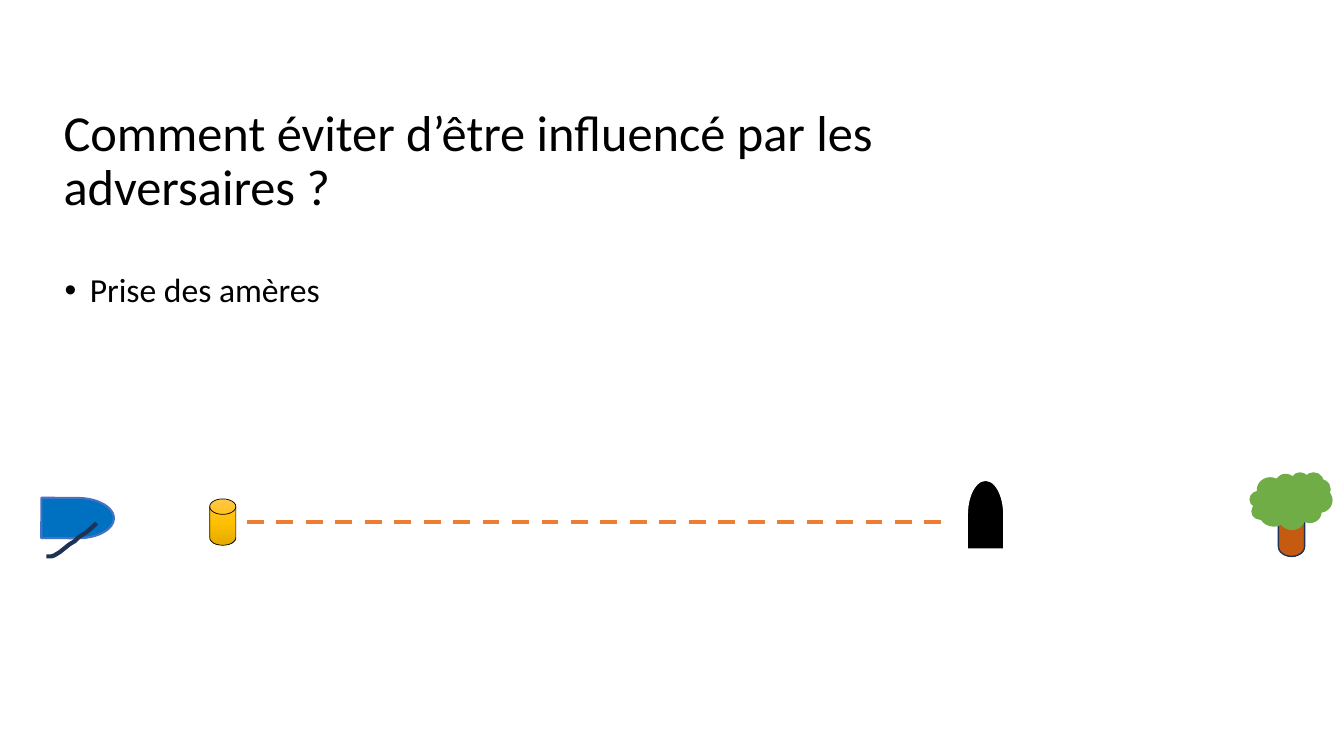
from copy import deepcopy

from lxml import etree
from pptx import Presentation
from pptx import util as u
from pptx.dml.color import RGBColor
from pptx.enum import dml, shapes, text
from pptx.oxml.ns import qn

TITLE = "Comment éviter d’être influencé par les adversaires ?"
BULLET = "Prise des amères"
FONT = "Calibri"
DISK = shapes.MSO_SHAPE.FLOWCHART_MAGNETIC_DISK
DELAY = shapes.MSO_SHAPE.FLOWCHART_DELAY
CLOUD = shapes.MSO_SHAPE.CLOUD

# preset, (left, top, width, height), rotation, fill, line colour, line width
BUOY = (DISK, (2.08, 4.95, 0.26, 0.46), 0, "FFC64B", "000000", 0.5)
COMMITTEE_BOAT = (DELAY, (9.43, 4.92, 0.69, 0.37), 270, "000000", "FFFFFF", 1.5)
TRUNK = (DISK, (12.68, 4.93, 0.26, 0.59), 0, "C55A11", "1E3256", 1)
FOLIAGE = (CLOUD, (12.4, 4.69, 0.81, 0.56), 0, "70AD47", "70AD47", 1)
SAILBOAT = (DELAY, (0.41, 4.94, 0.72, 0.4), 0.3, "0070C0", "4472C4", 1.5)
BUOY_STOPS = [(0, "FFC64B"), (0.5, "FFC000"), (1, "E3AB00")]
START_LINE = (2.45, 9.46, 5.18)
SAIL = [(0.96, 5.19), (0.86, 5.28), (0.78, 5.33), (0.74, 5.37), (0.69, 5.4),
        (0.64, 5.44), (0.59, 5.48), (0.54, 5.51), (0.51, 5.52), (0.46, 5.52)]


def color(value):
    return RGBColor.from_string(value)


def inches(values):
    return [u.Inches(value) for value in values]


def set_line(shape, value, width):
    shape.line.color.rgb = color(value)
    shape.line.width = u.Pt(width)


def add_preset(parent, item):
    preset, frame, rotation, fill, line, width = item
    shape = parent.add_shape(preset, *inches(frame))
    shape.rotation = rotation
    shape.shadow.inherit = False
    shape.fill.solid()
    shape.fill.fore_color.rgb = color(fill)
    set_line(shape, line, width)
    return shape


def shade(shape, stops):
    """Fill the shape with a top-to-bottom gradient."""
    shape.fill.gradient()
    shape.fill.gradient_angle = 270
    stop_list = shape._element.spPr.find(qn("a:gradFill")).find(qn("a:gsLst"))
    stop_list.insert(1, deepcopy(stop_list[0]))
    for stop, (position, value) in zip(shape.fill.gradient_stops, stops):
        stop.position = position
        stop.color.rgb = color(value)


def fill_placeholder(shape, words, frame, size):
    shape.left, shape.top, shape.width, shape.height = inches(frame)
    frame_text = shape.text_frame
    frame_text.text = words
    frame_text.auto_size = text.MSO_AUTO_SIZE.NONE
    frame_text.vertical_anchor = text.MSO_ANCHOR.MIDDLE
    paragraph = frame_text.paragraphs[0]
    paragraph.alignment = text.PP_ALIGN.LEFT
    paragraph.line_spacing = 0.9
    font = paragraph.runs[0].font
    font.name, font.size = FONT, u.Pt(size)
    font.color.rgb = color("000000")
    return frame_text


def main():
    presentation = Presentation()
    presentation.slide_width, presentation.slide_height = inches((13.33, 7.5))
    slide = presentation.slides.add_slide(presentation.slide_layouts[1])

    title = fill_placeholder(slide.shapes.title, TITLE, (0.53, 0.36, 10.99, 2.5), 36)
    title.margin_right = u.Inches(1)
    body = fill_placeholder(slide.placeholders[1], BULLET, (0.54, 1.85, 3.08, 2.5), 24)
    body.margin_bottom = u.Inches(0.46)
    paragraph = body.paragraphs[0]
    paragraph.space_before = u.Pt(10)
    properties = paragraph._p.get_or_add_pPr()
    properties.set("marL", str(u.Inches(0.25)))
    properties.set("indent", str(-u.Inches(0.25)))
    etree.SubElement(properties, qn("a:buFont")).set("typeface", "Arial")
    etree.SubElement(properties, qn("a:buChar")).set("char", "•")

    start = slide.shapes.add_group_shape().shapes
    shade(add_preset(start, BUOY), BUOY_STOPS)
    add_preset(start, COMMITTEE_BOAT)
    left, right, level = inches(START_LINE)
    line = start.add_connector(shapes.MSO_CONNECTOR.STRAIGHT, left, level, right, level)
    set_line(line, "ED7D31", 3)
    line.line.dash_style = dml.MSO_LINE.DASH
    etree.SubElement(line._element.spPr, qn("a:effectLst"))

    tree = slide.shapes.add_group_shape().shapes
    for part in (TRUNK, FOLIAGE):
        add_preset(tree, part)

    add_preset(slide.shapes, SAILBOAT)
    points = [inches(point) for point in SAIL]
    builder = slide.shapes.build_freeform(*points[0])
    builder.add_line_segments(points[1:], close=False)
    sail = builder.convert_to_shape()
    sail.shadow.inherit = False
    sail.fill.background()
    set_line(sail, "1E3256", 3)

    presentation.save("out.pptx")


if __name__ == "__main__":
    main()
